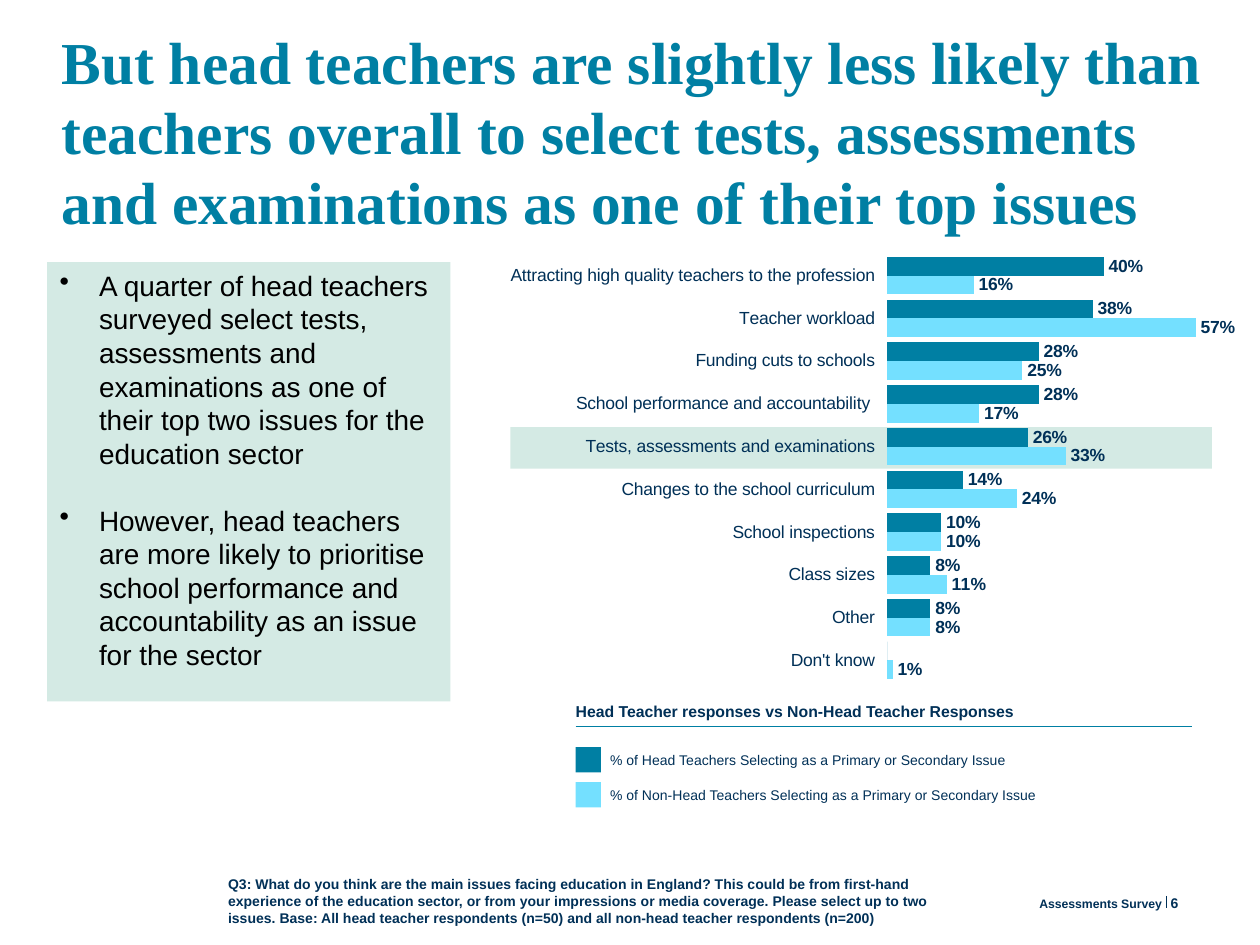
from dataclasses import dataclass

from lxml import etree
from pptx import Presentation
from pptx.chart.data import CategoryChartData
from pptx.dml.color import RGBColor
from pptx.enum.chart import XL_CHART_TYPE, XL_LABEL_POSITION, XL_TICK_MARK
from pptx.enum.shapes import MSO_CONNECTOR, MSO_SHAPE
from pptx.enum.text import MSO_ANCHOR, PP_ALIGN
from pptx.oxml import parse_xml
from pptx.oxml.ns import nsdecls, qn
from pptx.util import Pt


@dataclass(frozen=True)
class Theme:
    teal: RGBColor = RGBColor(0x00, 0x7F, 0xA3)
    sky: RGBColor = RGBColor(0x74, 0xE0, 0xFF)
    mint: RGBColor = RGBColor(0xD4, 0xEA, 0xE4)
    navy: RGBColor = RGBColor(0x00, 0x30, 0x57)
    black: RGBColor = RGBColor(0, 0, 0)
    serif: str = "Times New Roman"
    sans: str = "Arial"
    title: int = 34
    body: int = 16
    chart: int = 10
    heading: int = 9
    small: int = 8
    tiny: int = 7


T = Theme()


@dataclass(frozen=True)
class Box:
    x: float
    y: float
    w: float
    h: float

    def lengths(self):
        return [Pt(v) for v in (self.x, self.y, self.w, self.h)]


@dataclass(frozen=True)
class Label:
    text: str
    box: Box
    size: int = T.small
    bold: bool = True
    color: RGBColor = T.navy
    font: str = T.sans
    anchor: MSO_ANCHOR = MSO_ANCHOR.TOP
    align: PP_ALIGN = PP_ALIGN.LEFT
    wrap: bool = True
    spacing: float | None = None


@dataclass(frozen=True)
class Series:
    name: str
    color: RGBColor
    legend: str
    values: tuple


HEADS = Series("Series 2", T.teal, "% of Head Teachers Selecting as a Primary or Secondary Issue",
               (0, .08, .08, .10, .14, .26, .28, .28, .38, .40))
OTHERS = Series("Series 1", T.sky, "% of Non-Head Teachers Selecting as a Primary or Secondary Issue",
                (.01, .08, .11, .10, .24, .33, .17, .25, .57, .16))
ISSUES = ("Don't know", "Other", "Class sizes", "School inspections",
          "Changes to the school curriculum", "Tests, assessments and examinations",
          "School performance and accountability ", "Funding cuts to schools",
          "Teacher workload", "Attracting high quality teachers to the profession")
POINTS = (
    "A quarter of head teachers surveyed select tests, assessments and examinations "
    "as one of their top two issues for the education sector",
    "However, head teachers are more likely to prioritise school performance and "
    "accountability as an issue for the sector",
)
LEGEND_X = 329

LABELS = (
    Label("But head teachers are slightly less likely than teachers overall to select tests, "
          "assessments and examinations as one of their top issues",
          Box(35.3, 15.1, 668, 92), T.title, color=T.teal, font=T.serif, spacing=40),
    Label("Head Teacher responses vs Non-Head Teacher Responses",
          Box(LEGEND_X, 401, 254, 11), T.heading, wrap=False),
    Label("6", Box(668.9, 511.2, 34, 10), anchor=MSO_ANCHOR.MIDDLE),
    Label("Q3: What do you think are the main issues facing education in England? This could be "
          "from first-hand experience of the education sector, or from your impressions or media "
          "coverage. Please select up to two issues. Base: All head teacher respondents (n=50) "
          "and all non-head teacher respondents (n=200)",
          Box(130.3, 519.8, 409, 9.4), anchor=MSO_ANCHOR.BOTTOM),
    Label("Assessments Survey", Box(495.4, 511.2, 168.5, 9.4), T.tiny,
          anchor=MSO_ANCHOR.BOTTOM, align=PP_ALIGN.RIGHT),
)


def assign(obj, **values):
    for name, value in values.items():
        setattr(obj, name, value)


def set_font(font, size: int, color: RGBColor, bold: bool = False, name: str = T.sans):
    assign(font, size=Pt(size), bold=bold, name=name)
    font.color.rgb = color


def add_label(s, label: Label):
    tf = s.shapes.add_textbox(*label.box.lengths()).text_frame
    assign(tf, word_wrap=label.wrap, vertical_anchor=label.anchor,
           margin_left=0, margin_right=0, margin_top=0, margin_bottom=0)
    p = tf.paragraphs[0]
    p.alignment = label.align
    if label.spacing:
        p.line_spacing = Pt(label.spacing)
    r = p.add_run()
    r.text = label.text
    set_font(r.font, label.size, label.color, label.bold, label.font)


def add_block(s, box: Box, color: RGBColor):
    sp = s.shapes.add_shape(MSO_SHAPE.RECTANGLE, *box.lengths())
    sp.shadow.inherit = False
    sp.fill.solid()
    sp.fill.fore_color.rgb = color
    sp.line.fill.background()
    return sp


def add_rule(s, x1: float, y1: float, x2: float, y2: float, color: RGBColor):
    line = s.shapes.add_connector(MSO_CONNECTOR.STRAIGHT, Pt(x1), Pt(y1), Pt(x2), Pt(y2))
    line.line.width = Pt(0.5)
    line.line.color.rgb = color
    etree.SubElement(line._element.spPr, qn("a:effectLst"))


def add_bullets(s, box: Box):
    tf = add_block(s, box, T.mint).text_frame
    assign(tf, word_wrap=True, vertical_anchor=MSO_ANCHOR.TOP)
    for i, text in enumerate(POINTS):
        p = tf.add_paragraph() if i else tf.paragraphs[0]
        p.alignment = PP_ALIGN.LEFT
        if i:
            p.space_before = Pt(19)
        pPr = p._p.get_or_add_pPr()
        pPr.set("marL", str(Pt(22.5)))
        pPr.set("indent", str(-Pt(22.5)))
        etree.SubElement(pPr, qn("a:buChar"), char="•")
        r = p.add_run()
        r.text = text
        set_font(r.font, T.body, T.black)


def set_plot_area(chart, **fractions):
    """Fix the inner plot area as fractions of the chart frame."""
    area = chart._chartSpace.chart.plotArea
    for old in area.findall(qn("c:layout")):
        area.remove(old)
    parts = "".join(f'<c:{k} val="{v}"/>' for k, v in fractions.items())
    area.insert(0, parse_xml(
        f'<c:layout {nsdecls("c")}><c:manualLayout><c:layoutTarget val="inner"/>'
        f'<c:xMode val="edge"/><c:yMode val="edge"/>{parts}</c:manualLayout></c:layout>'))


def add_issue_chart(s, box: Box):
    data = CategoryChartData(number_format="0%")
    data.categories = ISSUES
    all_series = (OTHERS, HEADS)
    for item in all_series:
        data.add_series(item.name, item.values)
    chart = s.shapes.add_chart(XL_CHART_TYPE.BAR_CLUSTERED, *box.lengths(), data).chart
    assign(chart, has_legend=False, has_title=False)
    set_font(chart.font, T.chart, T.navy)
    set_plot_area(chart, x=0.542, y=0.061, w=0.399, h=0.875)
    assign(chart.value_axis, visible=False, has_major_gridlines=False,
           minimum_scale=0, maximum_scale=0.6)
    axis = chart.category_axis
    assign(axis, major_tick_mark=XL_TICK_MARK.OUTSIDE, has_major_gridlines=False)
    axis.format.line.fill.background()
    set_font(axis.tick_labels.font, T.chart, T.navy)
    plot = chart.plots[0]
    assign(plot, gap_width=28, overlap=0, vary_by_categories=False)
    for series, item in zip(plot.series, all_series):
        series.format.fill.solid()
        series.format.fill.fore_color.rgb = item.color
        labels = series.data_labels
        assign(labels, show_value=True, position=XL_LABEL_POSITION.OUTSIDE_END,
               number_format="0%", number_format_is_linked=False)
        set_font(labels.font, T.chart, T.navy, bold=True)
        if 0 in item.values:
            labels._element.insert(0, parse_xml(
                f'<c:dLbl {nsdecls("c")}><c:idx val="{item.values.index(0)}"/>'
                '<c:delete val="1"/></c:dLbl>'))


def main():
    prs = Presentation()
    assign(prs, slide_width=Pt(720), slide_height=Pt(540))
    s = prs.slides.add_slide(prs.slide_layouts[6])
    add_rule(s, 666.7, 511.9, 666.7, 519.1, T.navy)
    add_block(s, Box(291.6, 244.1, 401, 23.8), T.mint)
    add_issue_chart(s, Box(254.9, 128.2, 465.1, 279.4))
    add_bullets(s, Box(27, 149.8, 230.4, 251))
    add_rule(s, LEGEND_X, 415.4, 681, 415.4, T.teal)
    for i, item in enumerate((HEADS, OTHERS)):
        y = 427 + 20 * i
        add_block(s, Box(LEGEND_X, y, 14.4, 14.4), item.color)
        add_label(s, Label(item.legend, Box(LEGEND_X + 19.6, y + 2.4, 283, 9.4), bold=False))
    for label in LABELS:
        add_label(s, label)
    prs.save("out.pptx")


if __name__ == "__main__":
    main()
